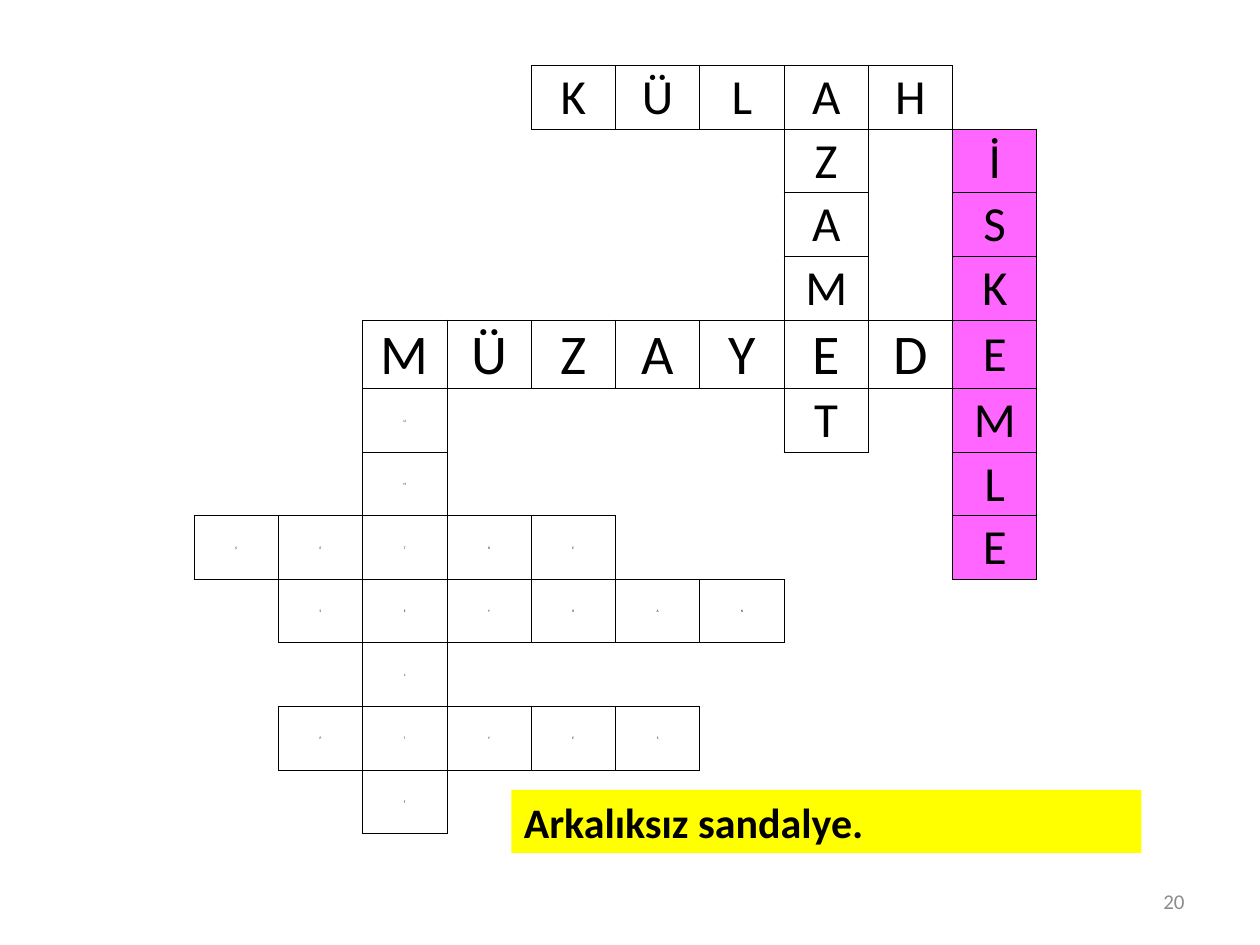
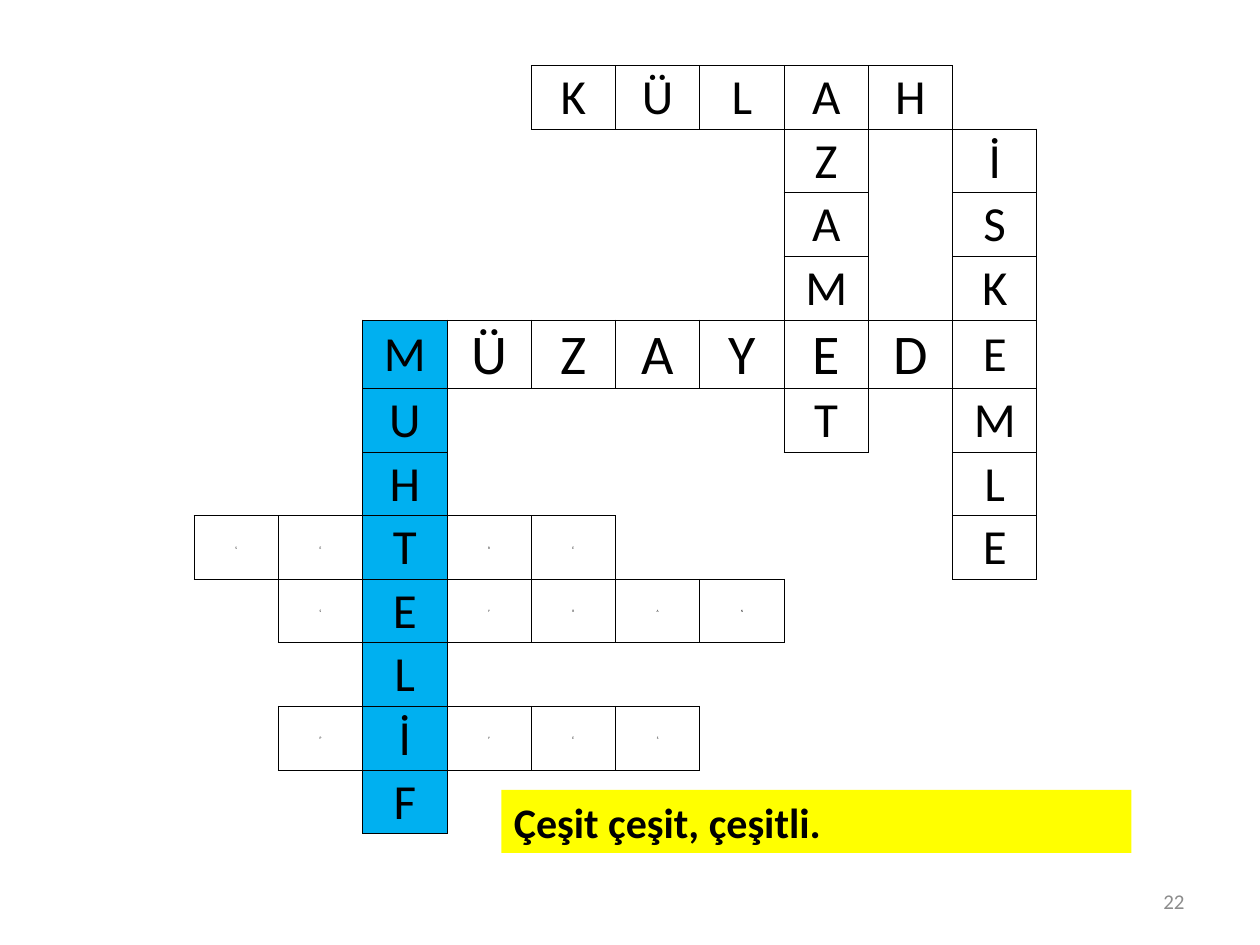
import lxml.etree
import pptx
import pptx.dml.color
import pptx.enum.shapes
import pptx.enum.text
import pptx.oxml.ns
import pptx.util

Inches, Pt = pptx.util.Inches, pptx.util.Pt
RGBColor = pptx.dml.color.RGBColor
Align = pptx.enum.text.PP_ALIGN
Anchor = pptx.enum.text.MSO_ANCHOR

# Crossword words in solving order: word, row, column, direction, letter size
WORDS = [
    ("KÜLAH", 0, 4, "across", 28),
    ("AZAMET", 0, 7, "down", 28),
    ("MÜZAYEDE", 4, 2, "across", 32),
    ("İSKEMLE", 1, 9, "down", 28),
    ("MUHTELİF", 4, 2, "down", 28),
    ("SETRE", 7, 0, "across", 28),
    ("SEYRAN", 8, 1, "across", 28),
    ("PİYES", 10, 1, "across", 28),
]
UNSOLVED_SIZE = 2
ROWS, COLUMNS = 12, 10

BLACK = RGBColor(0x00, 0x00, 0x00)
GREY = RGBColor(0x8C, 0x8C, 0x8C)
YELLOW = RGBColor(0xFF, 0xFF, 0x00)
PINK = RGBColor(0xFF, 0x66, 0xFF)
BLUE = RGBColor(0x00, 0xB0, 0xF0)

# The newest solved word on each slide is highlighted.
SLIDES = [
    {"number": "20", "solved": 4, "highlight": PINK,
     "clue": "Arkalıksız sandalye.", "clue_left": 4.06},
    {"number": "22", "solved": 5, "highlight": BLUE,
     "clue": "Çeşit çeşit, çeşitli.", "clue_left": 3.98},
]

FONT = "Calibri"
PLAIN_TABLE_STYLE = "{2D5ABB26-0587-4C30-8999-92F81FD0307C}"
EDGES = {"a:lnL": (0, -1), "a:lnR": (0, 1), "a:lnT": (-1, 0), "a:lnB": (1, 0)}
LETTER_CELL = {
    "vertical_anchor": Anchor.MIDDLE,
    "margin_left": Inches(0.01),
    "margin_right": Inches(0.01),
    "margin_top": Inches(0.01),
    "margin_bottom": 0,
}
PAGE_FRAME = {"word_wrap": True, "vertical_anchor": Anchor.MIDDLE}
CLUE_FRAME = {
    "word_wrap": True,
    "vertical_anchor": Anchor.TOP,
    "auto_size": pptx.enum.text.MSO_AUTO_SIZE.SHAPE_TO_FIT_TEXT,
}


def apply(target, values):
    for name, value in values.items():
        setattr(target, name, value)


def write(frame, text, size, color=BLACK, align=Align.LEFT, bold=False):
    paragraph = frame.paragraphs[0]
    paragraph.alignment = align
    run = paragraph.add_run()
    run.text = text
    apply(run.font, {"name": FONT, "size": Pt(size), "bold": bold})
    run.font.color.rgb = color


def word_cells(word, row, column, direction):
    for step, letter in enumerate(word):
        if direction == "across":
            yield (row, column + step), letter
        else:
            yield (row + step, column), letter


def place_letters(solved, highlight):
    """Map each used square to its letter, size and fill; later words win crossings."""
    squares = {}
    drawing_order = list(range(solved, len(WORDS))) + list(range(solved))
    for index in drawing_order:
        *placement, size = WORDS[index]
        shown_size = size if index < solved else UNSOLVED_SIZE
        fill = highlight if index == solved - 1 else None
        for square, letter in word_cells(*placement):
            squares[square] = (letter, shown_size, fill)
    return squares


def add_border(cell, edge, visible):
    qn = pptx.oxml.ns.qn
    properties = cell._tc.get_or_add_tcPr()
    line = lxml.etree.SubElement(properties, qn(edge), w=str(Pt(0.5)))
    if visible:
        fill = lxml.etree.SubElement(line, qn("a:solidFill"))
        lxml.etree.SubElement(fill, qn("a:srgbClr"), val=str(BLACK))
    else:
        lxml.etree.SubElement(line, qn("a:noFill"))


def add_crossword(slide, squares):
    width, height = Inches(6.69), Inches(6.06)
    crossword = slide.shapes.add_table(
        ROWS, COLUMNS, Inches(1.54), Inches(0.52), width, height).table
    apply(crossword, {"first_row": False, "horz_banding": False})
    style = crossword._tbl.tblPr.find(pptx.oxml.ns.qn("a:tableStyleId"))
    style.text = PLAIN_TABLE_STYLE

    for row in range(ROWS):
        for column in range(COLUMNS):
            cell = crossword.cell(row, column)
            square = squares.get((row, column))
            for edge, (down, right) in EDGES.items():
                neighbour = (row + down, column + right)
                add_border(cell, edge, square is not None or neighbour in squares)
            cell.fill.background()
            if square is None:
                continue
            letter, size, fill = square
            apply(cell, LETTER_CELL)
            write(cell.text_frame, letter, size, align=Align.CENTER)
            if fill is not None:
                cell.fill.solid()
                cell.fill.fore_color.rgb = fill


def add_clue(slide, text, left):
    clue = slide.shapes.add_shape(
        pptx.enum.shapes.MSO_SHAPE.RECTANGLE,
        Inches(left), Inches(6.27), Inches(5), Inches(0.5))
    clue.shadow.inherit = False
    clue.fill.solid()
    clue.fill.fore_color.rgb = YELLOW
    clue.line.fill.background()
    apply(clue.text_frame, CLUE_FRAME)
    write(clue.text_frame, text, 24, bold=True)


def add_page_number(slide, number):
    page = slide.shapes.add_textbox(
        Inches(7.17), Inches(6.95), Inches(2.33), Inches(0.4))
    apply(page.text_frame, PAGE_FRAME)
    write(page.text_frame, number, 12, GREY, Align.RIGHT)


def main():
    deck = pptx.Presentation()
    apply(deck, {"slide_width": Inches(10), "slide_height": Inches(7.5)})
    blank_layout = deck.slide_layouts.get_by_name("Blank")
    for content in SLIDES:
        slide = deck.slides.add_slide(blank_layout)
        add_page_number(slide, content["number"])
        add_crossword(slide, place_letters(content["solved"], content["highlight"]))
        add_clue(slide, content["clue"], content["clue_left"])
    deck.save("out.pptx")


if __name__ == "__main__":
    main()
